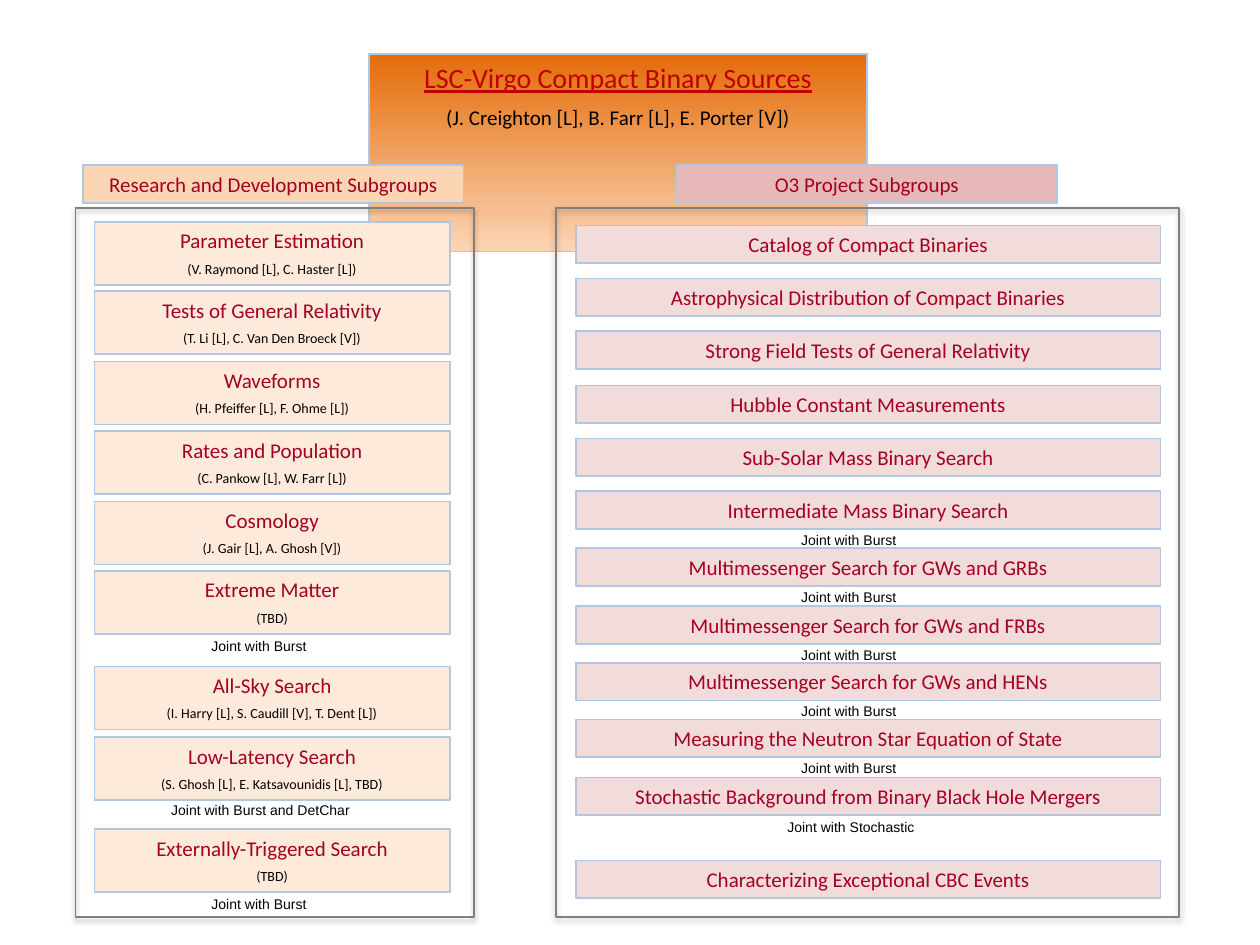
from dataclasses import dataclass

from lxml.etree import SubElement
from pptx import Presentation
from pptx.dml.color import RGBColor
from pptx.enum.shapes import MSO_SHAPE as Preset
from pptx.enum.text import MSO_ANCHOR as Anchor, MSO_AUTO_SIZE as AutoSize, PP_ALIGN as Align
from pptx.oxml.ns import qn
from pptx.util import Inches, Pt


@dataclass(frozen=True)
class Theme:
    title: str = "C00000"
    heading: str = "A50021"
    black: str = "000000"
    border: str = "B0C6E1"
    panel_border: str = "808080"
    title_top: str = "E46C0A"
    title_bottom: str = "FCD5B5"
    research_head: str = "FCD5B5"
    research_box: str = "FDEADA"
    project_head: str = "E6B9B8"
    project_box: str = "F2DCDB"
    title_size: int = 16
    main_size: int = 12
    small_size: int = 8


@dataclass(frozen=True)
class Line:
    text: str
    size: int
    color: str
    font: str = "Calibri"
    underline: bool = False


@dataclass(frozen=True)
class Subgroup:
    top: float
    name: str
    chairs: str = ""
    joint: str = ""
    joint_offset: float = 0.48


@dataclass(frozen=True)
class Column:
    heading: str
    heading_left: float
    heading_fill: str
    panel_left: float
    panel_width: float
    box_left: float
    box_width: float
    box_height: float
    box_fill: str
    note_center: float
    subgroups: list


THEME = Theme()
NOTE_WIDTHS = {
    "Joint with Burst": 1,
    "Joint with Burst and DetChar": 1.64,
    "Joint with Stochastic": 1.22,
}

# Subgroups with their vertical rhythm
RESEARCH = [
    Subgroup(round(1.76 + 0.554 * row, 2), *entry)
    for row, entry in enumerate([
        ("Parameter Estimation", "(V. Raymond [L], C. Haster [L])"),
        ("Tests of General Relativity", "(T. Li [L], C. Van Den Broeck [V])"),
        ("Waveforms", "(H. Pfeiffer [L], F. Ohme [L])"),
        ("Rates and Population", "(C. Pankow [L], W. Farr [L])"),
        ("Cosmology", "(J. Gair [L], A. Ghosh [V])"),
        ("Extreme Matter", "(TBD)", "Joint with Burst"),
    ])
] + [
    Subgroup(5.29, "All-Sky Search", "(I. Harry [L], S. Caudill [V], T. Dent [L])"),
    Subgroup(5.85, "Low-Latency Search", "(S. Ghosh [L], E. Katsavounidis [L], TBD)",
             "Joint with Burst and DetChar", 0.46),
    Subgroup(6.58, "Externally-Triggered Search", "(TBD)", "Joint with Burst"),
]
PROJECTS = [
    Subgroup(round(1.79 + 0.422 * row, 2), name)
    for row, name in enumerate([
        "Catalog of Compact Binaries",
        "Astrophysical Distribution of Compact Binaries",
        "Strong Field Tests of General Relativity",
        "Hubble Constant Measurements",
        "Sub-Solar Mass Binary Search",
    ])
] + [
    Subgroup(round(3.9 + 0.453 * row, 2), name, joint="Joint with Burst", joint_offset=0.27)
    for row, name in enumerate([
        "Intermediate Mass Binary Search",
        "Multimessenger Search for GWs and GRBs",
        "Multimessenger Search for GWs and FRBs",
        "Multimessenger Search for GWs and HENs",
        "Measuring the Neutron Star Equation of State",
    ])
] + [
    Subgroup(6.17, "Stochastic Background from Binary Black Hole Mergers",
             joint="Joint with Stochastic", joint_offset=0.28),
    Subgroup(6.83, "Characterizing Exceptional CBC Events"),
]
COLUMNS = [
    Column("Research and Development Subgroups", 0.66, THEME.research_head, 0.6, 3.16,
           0.75, 2.82, 0.5, THEME.research_box, 2.08, RESEARCH),
    Column("O3 Project Subgroups", 5.37, THEME.project_head, 4.41, 4.95,
           4.57, 4.64, 0.3, THEME.project_box, 6.76, PROJECTS),
]


def rgb(color: str) -> RGBColor:
    return RGBColor.from_string(color)


def write_lines(shape, lines: list, align=Align.CENTER, wrap: bool = True) -> None:
    frame = shape.text_frame
    settings = {"word_wrap": wrap, "auto_size": AutoSize.SHAPE_TO_FIT_TEXT,
                "vertical_anchor": Anchor.TOP}
    for name, value in settings.items():
        setattr(frame, name, value)
    for index, line in enumerate(lines):
        para = frame.add_paragraph() if index else frame.paragraphs[0]
        para.alignment = align
        para.space_before = Pt(line.size / 2 if index else 0)
        span = para.add_run()
        span.text = line.text
        formats = {"name": line.font, "size": Pt(line.size), "underline": line.underline}
        for name, value in formats.items():
            setattr(span.font, name, value)
        span.font.color.rgb = rgb(line.color)


def set_border(shape, color: str) -> None:
    shape.line.color.rgb = rgb(color)
    shape.line.width = Pt(1)


def add_box(page, left: float, top: float, width: float, height: float,
            fill: str, lines: list) -> None:
    box = page.shapes.add_shape(Preset.RECTANGLE, *map(Inches, (left, top, width, height)))
    box.shadow.inherit = False
    box.fill.solid()
    box.fill.fore_color.rgb = rgb(fill)
    set_border(box, THEME.border)
    write_lines(box, lines)


def add_panel(page, left: float, width: float) -> None:
    panel = page.shapes.add_shape(Preset.RECTANGLE, *map(Inches, (left, 1.65, width, 5.63)))
    panel.fill.background()
    set_border(panel, THEME.panel_border)
    panel.shadow.inherit = False
    # Soft shadow straight down
    effects = panel.element.spPr.find(qn("a:effectLst"))
    shadow = SubElement(effects, qn("a:outerShdw"), blurRad=str(Pt(3.1)), dist=str(Pt(1.8)),
                        dir="5400000", rotWithShape="0")
    color = SubElement(shadow, qn("a:srgbClr"), val=THEME.black)
    SubElement(color, qn("a:alpha"), val="35000")


def add_note(page, center: float, top: float, text: str) -> None:
    width = NOTE_WIDTHS[text]
    note = page.shapes.add_textbox(*map(Inches, (center - width / 2, top, width, 0.24)))
    write_lines(note, [Line(text, THEME.small_size, THEME.black, "Arial")], Align.LEFT, False)


def add_title(page) -> None:
    title = page.shapes.title
    place = {"left": 2.93, "top": 0.43, "width": 3.95, "height": 0.67}
    for name, value in place.items():
        setattr(title, name, Inches(value))
    title.fill.gradient()
    title.fill.gradient_angle = 270
    for stop, color in zip(title.fill.gradient_stops, (THEME.title_top, THEME.title_bottom)):
        stop.color.rgb = rgb(color)
    set_border(title, THEME.border)
    write_lines(title, [
        Line("LSC-Virgo Compact Binary Sources", THEME.title_size, THEME.title, underline=True),
        Line("(J. Creighton [L], B. Farr [L], E. Porter [V])", THEME.main_size, THEME.black),
    ])


def add_column(page, column: Column) -> None:
    add_box(page, column.heading_left, 1.31, 3.02, 0.3, column.heading_fill,
            [Line(column.heading, THEME.main_size, THEME.heading)])
    add_panel(page, column.panel_left, column.panel_width)
    for group in column.subgroups:
        lines = [Line(group.name, THEME.main_size, THEME.heading)]
        if group.chairs:
            lines.append(Line(group.chairs, THEME.small_size, THEME.black))
        add_box(page, column.box_left, group.top, column.box_width, column.box_height,
                column.box_fill, lines)
        if group.joint:
            add_note(page, column.note_center, group.top + group.joint_offset, group.joint)


def main() -> None:
    deck = Presentation()
    deck.slide_width, deck.slide_height = Inches(10), Inches(7.5)
    page = deck.slides.add_slide(deck.slide_layouts[5])
    add_title(page)
    for column in COLUMNS:
        add_column(page, column)
    deck.save("out.pptx")


if __name__ == "__main__":
    main()
